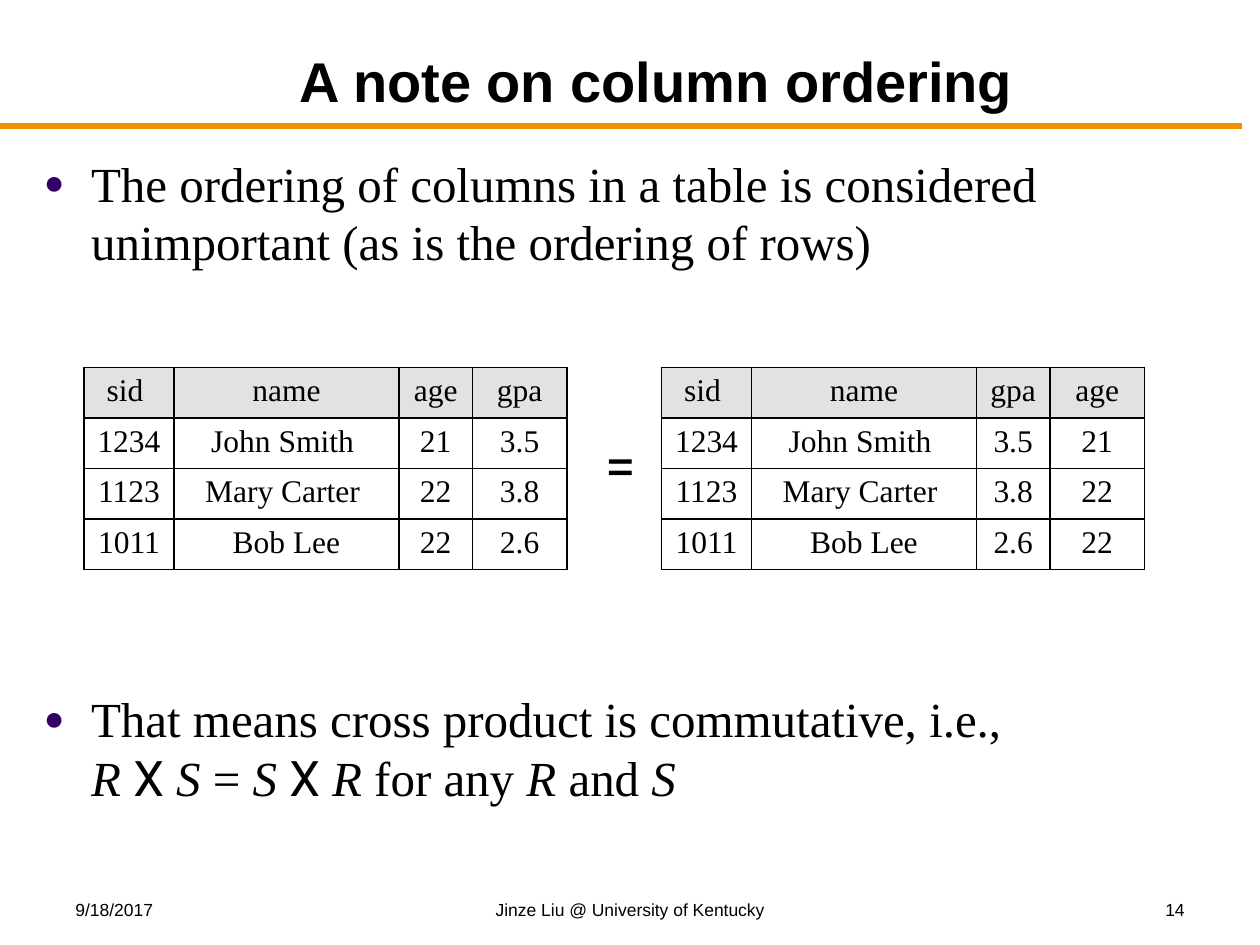
from dataclasses import dataclass

from lxml.etree import SubElement
from pptx import Presentation
from pptx.dml.color import RGBColor
from pptx.enum.shapes import MSO_CONNECTOR
from pptx.enum.text import MSO_ANCHOR, PP_ALIGN
from pptx.oxml.ns import qn
from pptx.util import Pt

BLACK = RGBColor(0x00, 0x00, 0x00)
ORANGE = RGBColor(0xEF, 0x91, 0x00)
PURPLE = RGBColor(0x33, 0x00, 0x66)
HEADER_GREY = RGBColor(0xE1, 0xE3, 0xE3)

SANS, SERIF, SYMBOL = "Arial", "Times New Roman", "Roboto"
COLUMN_WIDTHS = (51.5, 128.5, 42, 54)
ROW_HEIGHT = 28.8
TABLE_TOP = 210


@dataclass
class Span:
    text: str
    font: str = SERIF
    italic: bool = False


@dataclass
class TextBox:
    left: float
    top: float
    width: float
    height: float
    lines: list[list[Span]]
    size: float
    align: PP_ALIGN = PP_ALIGN.LEFT
    bulleted: bool = False
    spaced: bool = False
    wrap: bool = True


@dataclass
class Relation:
    left: float
    columns: tuple[str, ...]


STUDENTS = (
    {"sid ": "1234", "name": "John Smith ", "age": "21", "gpa": "3.5"},
    {"sid ": "1123", "name": "Mary Carter ", "age": "22", "gpa": "3.8"},
    {"sid ": "1011", "name": "Bob Lee", "age": "22", "gpa": "2.6"},
)

RELATIONS = (
    Relation(48, ("sid ", "name", "age", "gpa")),
    Relation(378, ("sid ", "name", "gpa", "age")),
)

R, S = Span("R", italic=True), Span("S", italic=True)
SPACE, CROSS = Span(" "), Span("X ", SYMBOL)

TEXT_BOXES = (
    TextBox(18, 84, 678, 94, [[Span(
        "The ordering of columns in a table is considered "
        "unimportant (as is the ordering of rows)")]],
        28, bulleted=True, spaced=True),
    TextBox(18, 390, 684, 96, [
        [Span("That means cross product is commutative, i.e.,")],
        [R, SPACE, CROSS, S, Span(" = "), S, SPACE, CROSS, R,
         Span(" for any "), R, Span(" and "), S]],
        28, bulleted=True, spaced=True),
    TextBox(338.5, 242.5, 41, 45.5, [[Span("=", SYMBOL)]], 32, spaced=True, wrap=False),
    TextBox(36, 510, 168, 18, [[Span("9/18/2017", SANS)]], 10),
    TextBox(246, 510, 228, 18, [[Span("Jinze Liu @ University of Kentucky", SANS)]],
            10, PP_ALIGN.CENTER),
    TextBox(516, 510, 168, 18, [[Span("14", SANS)]], 10, PP_ALIGN.RIGHT),
)


def set_font(font, **formats) -> None:
    font.color.rgb = BLACK
    for name, value in formats.items():
        setattr(font, name, value)


def place(shape, left: float, top: float, width: float, height: float) -> None:
    box = {"left": left, "top": top, "width": width, "height": height}
    for name, value in box.items():
        setattr(shape, name, Pt(value))


def add_relative_space(para) -> None:
    """Put a gap of 20% of the line height before the paragraph."""
    before = SubElement(para._p.get_or_add_pPr(), qn("a:spcBef"))
    SubElement(before, qn("a:spcPct"), val="20000")


def add_bullet(para) -> None:
    properties = para._p.get_or_add_pPr()
    properties.set("marL", str(Pt(27)))
    properties.set("indent", str(-Pt(27)))
    color = SubElement(properties, qn("a:buClr"))
    SubElement(color, qn("a:srgbClr"), val=str(PURPLE))
    SubElement(properties, qn("a:buSzPct"), val="70000")
    SubElement(properties, qn("a:buFont"), typeface=SANS)
    SubElement(properties, qn("a:buChar"), char="●")


def add_title(page, text: str) -> None:
    title = page.shapes.title
    place(title, 78, 18, 594, 50.5)
    frame = title.text_frame
    frame.text = text
    frame.vertical_anchor = MSO_ANCHOR.BOTTOM
    para = frame.paragraphs[0]
    para.alignment = PP_ALIGN.CENTER
    set_font(para.runs[0].font, name=SANS, size=Pt(32), bold=True)


def add_title_rule(page) -> None:
    rule = page.shapes.add_connector(
        MSO_CONNECTOR.STRAIGHT, Pt(0), Pt(72), Pt(710), Pt(72))
    rule.line.color.rgb = ORANGE
    rule.line.width = Pt(3)
    SubElement(rule._element.spPr, qn("a:effectLst"))


def add_text_box(page, content: TextBox) -> None:
    box = page.shapes.add_textbox(*map(Pt, (
        content.left, content.top, content.width, content.height)))
    frame = box.text_frame
    frame.word_wrap = content.wrap
    para = frame.paragraphs[0]
    para.alignment = content.align
    if content.spaced:
        add_relative_space(para)
    if content.bulleted:
        add_bullet(para)
    for index, line in enumerate(content.lines):
        if index:
            para.add_line_break()
        for span in line:
            run = para.add_run()
            run.text = span.text
            set_font(run.font, name=span.font, size=Pt(content.size), italic=span.italic)


def add_borders(cell) -> None:
    properties = cell._tc.get_or_add_tcPr()
    for index, side in enumerate(("lnL", "lnR", "lnT", "lnB")):
        line = properties.makeelement(qn(f"a:{side}"), {"w": str(Pt(1))})
        fill = SubElement(line, qn("a:solidFill"))
        SubElement(fill, qn("a:srgbClr"), val=str(BLACK))
        properties.insert(index, line)


def add_relation(page, relation: Relation) -> None:
    rows = [relation.columns]
    rows += [[student[name] for name in relation.columns] for student in STUDENTS]
    table = page.shapes.add_table(
        len(rows), len(COLUMN_WIDTHS), Pt(relation.left), Pt(TABLE_TOP),
        Pt(sum(COLUMN_WIDTHS)), Pt(ROW_HEIGHT * len(rows))).table
    table.horz_banding = False
    for column, width in zip(table.columns, COLUMN_WIDTHS):
        column.width = Pt(width)
    for row_index, values in enumerate(rows):
        table.rows[row_index].height = Pt(ROW_HEIGHT)
        for column_index, value in enumerate(values):
            cell = table.cell(row_index, column_index)
            cell.text = value
            para = cell.text_frame.paragraphs[0]
            para.alignment = PP_ALIGN.CENTER
            add_relative_space(para)
            set_font(para.runs[0].font, name=SERIF, size=Pt(18), bold=False)
            if row_index == 0:
                cell.fill.solid()
                cell.fill.fore_color.rgb = HEADER_GREY
            else:
                cell.fill.background()
            add_borders(cell)


def main() -> None:
    deck = Presentation()
    deck.slide_width, deck.slide_height = Pt(720), Pt(540)
    page = deck.slides.add_slide(deck.slide_layouts[5])
    add_title_rule(page)
    add_title(page, "A note on column ordering")
    for content in TEXT_BOXES:
        add_text_box(page, content)
    for relation in RELATIONS:
        add_relation(page, relation)
    deck.save("out.pptx")


if __name__ == "__main__":
    main()
